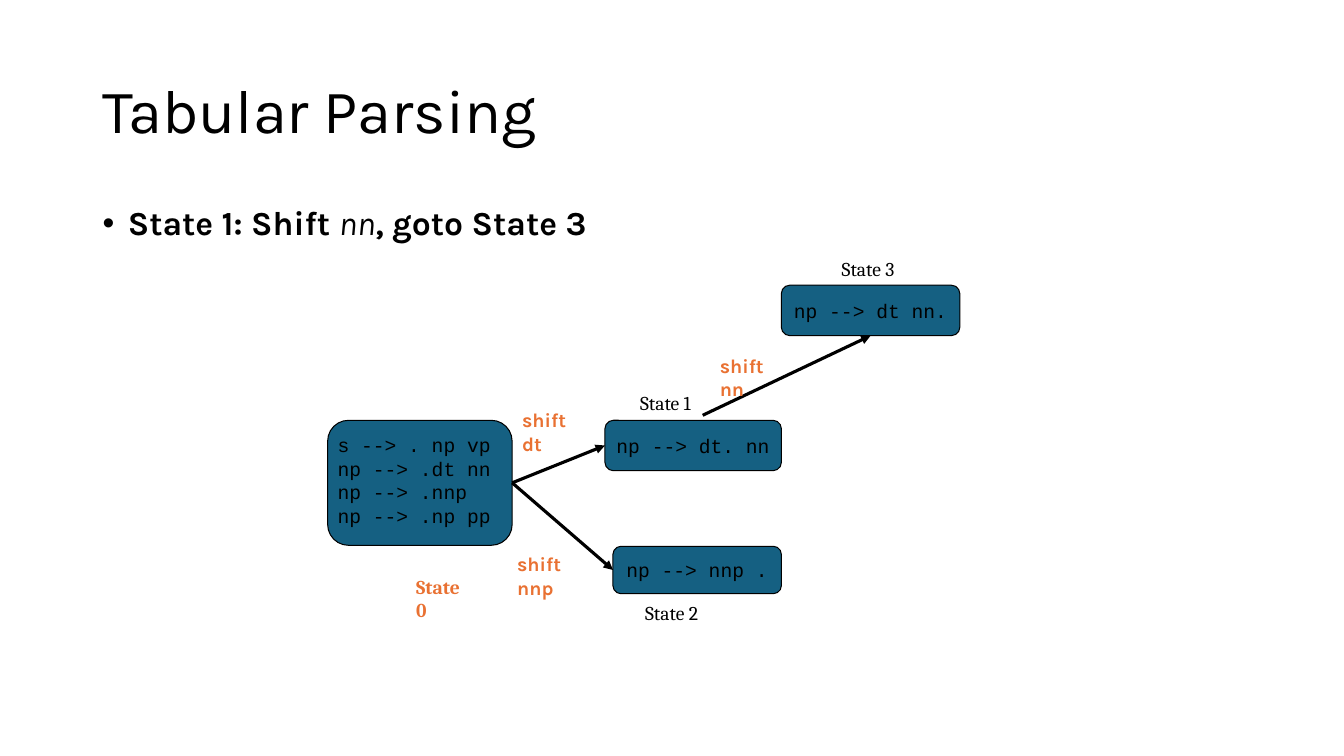
import pptx
import pptx.util
import pptx.dml.color
import pptx.enum.shapes
import pptx.enum.text
import pptx.oxml
import pptx.oxml.ns
from pptx.util import Inches

COLORS = {"text": "000000", "state": "156082", "accent": "E97132"}
PP_ALIGN = pptx.enum.text.PP_ALIGN
MSO_ANCHOR = pptx.enum.text.MSO_ANCHOR


def style(span, font, size, color="text", bold=False, italic=False):
    span.font.name = font
    span.font.size = pptx.util.Pt(size)
    span.font.bold = bold
    span.font.italic = italic
    span.font.color.rgb = pptx.dml.color.RGBColor.from_string(COLORS[color])


def add_text(left, top, width, height, text, font, size, color="text", bold=False, wrap=True):
    box = slide.shapes.add_textbox(Inches(left), Inches(top), Inches(width), Inches(height))
    box.text_frame.word_wrap = wrap
    box.text_frame.text = text
    for para in box.text_frame.paragraphs:
        for span in para.runs:
            style(span, font, size, color, bold)
    return box.text_frame


deck = pptx.Presentation()
deck.slide_width, deck.slide_height = Inches(13.33), Inches(7.5)
slide = deck.slides.add_slide(deck.slide_layouts[6])

# Title and bullet
title = add_text(0.92, 0.4, 11.5, 1.45, "Tabular Parsing", "Karla", 44)
title.vertical_anchor = MSO_ANCHOR.MIDDLE
title.paragraphs[0].line_spacing = 0.9

body = add_text(0.92, 2, 11.5, 0.79, "State 1: Shift ", "Karla", 24, bold=True)
para = body.paragraphs[0]
para.line_spacing = 0.9
para.space_before = pptx.util.Pt(10)
for text, emphasized in [("nn", True), (", goto State 3", False)]:
    span = para.add_run()
    span.text = text
    style(span, "Karla", 24, bold=not emphasized, italic=emphasized)
properties = para._p.get_or_add_pPr()
properties.set("marL", str(Inches(0.25)))
properties.set("indent", str(Inches(-0.25)))
namespace = pptx.oxml.ns.nsdecls("a")
for bullet in ('<a:buFont %s typeface="Arial"/>', '<a:buChar %s char="•"/>'):
    properties.append(pptx.oxml.parse_xml(bullet % namespace))

# Parser states
states = []
for left, top, width, height, item in [
    (3.25, 4.17, 1.83, 1.24, ""),
    (6, 4.17, 1.75, 0.5, "np --> dt. nn"),
    (6.08, 5.42, 1.67, 0.47, "np --> nnp ."),
    (7.75, 2.83, 1.77, 0.5, "np --> dt nn."),
]:
    state = slide.shapes.add_shape(
        pptx.enum.shapes.MSO_SHAPE.ROUNDED_RECTANGLE,
        Inches(left), Inches(top), Inches(width), Inches(height))
    state.shadow.inherit = False
    state.fill.solid()
    state.fill.fore_color.rgb = pptx.dml.color.RGBColor.from_string(COLORS["state"])
    state.line.color.rgb = pptx.dml.color.RGBColor.from_string(COLORS["text"])
    state.line.width = pptx.util.Pt(0.75)
    if item:
        state.text_frame.word_wrap = False
        state.text_frame.vertical_anchor = MSO_ANCHOR.MIDDLE
        state.text_frame.text = item
        para = state.text_frame.paragraphs[0]
        para.alignment = PP_ALIGN.CENTER
        style(para.runs[0], "Courier New", 14)
    states.append(state)

start_items = ["s --> . np vp", "np --> .dt nn", "np --> .nnp", "np --> .np pp"]
add_text(3.25, 4.25, 1.73, 1.04, "\n".join(start_items), "Courier New", 14, wrap=False)

# Transitions
start, after_dt, after_nnp, after_nn = states
for origin, target, side, begin, end in [
    (start, after_dt, 1, (5.08, 4.79), (6, 4.42)),
    (start, after_nnp, 1, (5.08, 4.79), (6.08, 5.65)),
    (None, after_nn, 2, (6.97, 4.12), (8.63, 3.33)),
]:
    arrow = slide.shapes.add_connector(
        pptx.enum.shapes.MSO_CONNECTOR.STRAIGHT,
        *[Inches(value) for value in begin + end])
    if origin:
        arrow.begin_connect(origin, 3)
    arrow.end_connect(target, side)
    arrow.line.color.rgb = pptx.dml.color.RGBColor.from_string(COLORS["text"])
    arrow.line.width = pptx.util.Pt(2.25)
    arrow.line._get_or_add_ln().append(
        pptx.oxml.parse_xml('<a:tailEnd %s type="triangle"/>' % namespace))
    arrow._element.spPr.append(pptx.oxml.parse_xml("<a:effectLst %s/>" % namespace))

# Labels
for left, top, text in [(6.25, 3.83, "State 1"), (6.3, 5.91, "State 2"), (8.25, 2.5, "State 3")]:
    add_text(left, top, 0.74, 0.34, text, "Cambria", 14, wrap=False)
for left, top, width, text, font in [
    (4.03, 5.65, 0.77, "State 0", "Cambria"),
    (5.08, 4, 0.78, "shift dt", "Karla"),
    (5.03, 5.43, 0.92, "shift nnp", "Karla"),
    (7.04, 3.46, 0.82, "shift nn", "Karla"),
]:
    add_text(left, top, width, 0.34, text, font, 14, "accent", bold=True)

deck.save("out.pptx")
